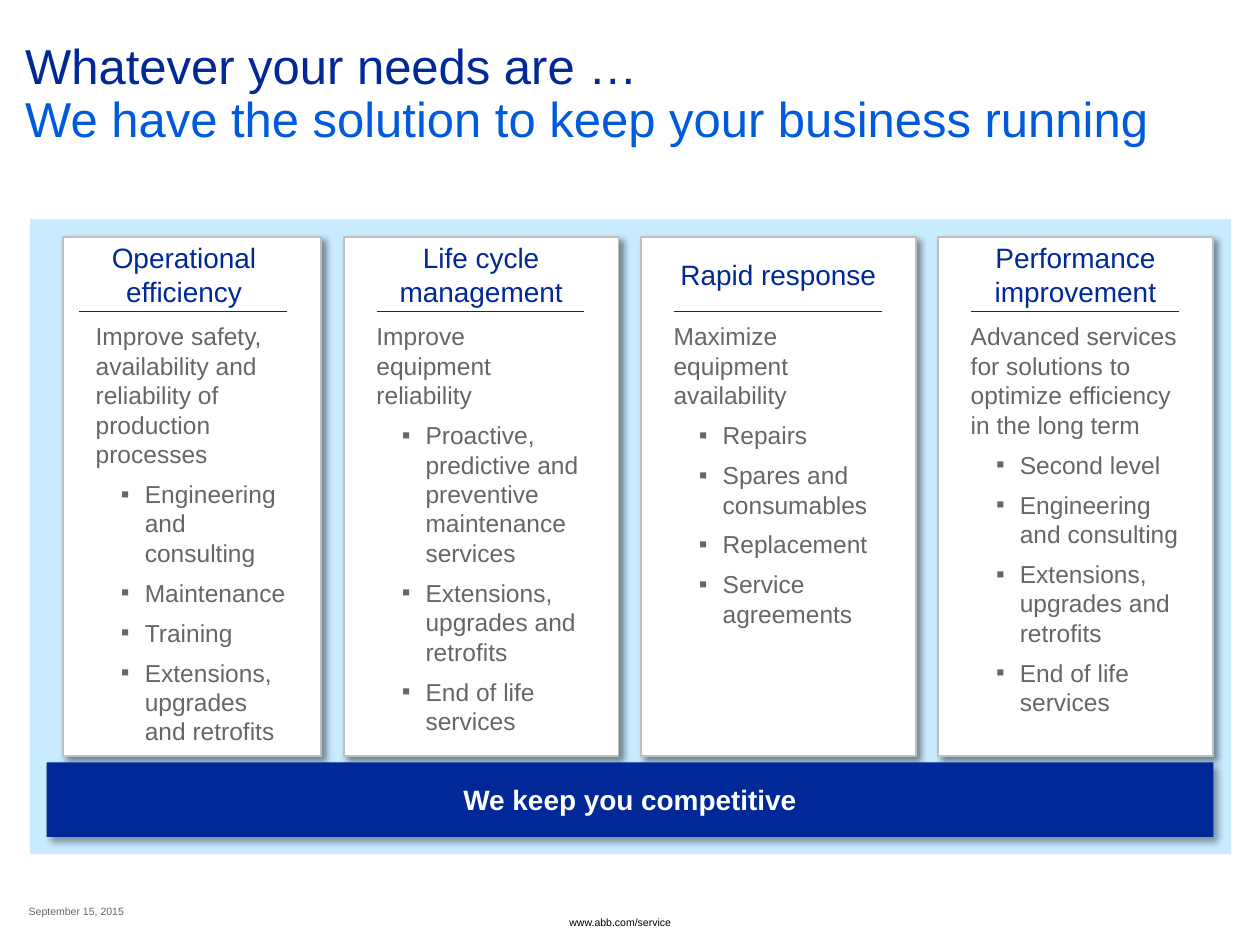
from dataclasses import dataclass

from lxml import etree
from pptx import Presentation
from pptx.dml.color import RGBColor
from pptx.enum.shapes import MSO_CONNECTOR, MSO_SHAPE
from pptx.enum.text import MSO_ANCHOR, PP_ALIGN
from pptx.oxml.ns import qn
from pptx.util import Cm, Pt

RECT, PLATE = MSO_SHAPE.RECTANGLE, MSO_SHAPE.PENTAGON
STRAIGHT = MSO_CONNECTOR.STRAIGHT
TOP, MIDDLE = MSO_ANCHOR.TOP, MSO_ANCHOR.MIDDLE
LEFT, CENTER = PP_ALIGN.LEFT, PP_ALIGN.CENTER


@dataclass(frozen=True)
class Theme:
    font: str = "Arial"
    navy: str = "002897"
    blue: str = "005ADE"
    pale: str = "C8EBFF"
    white: str = "FFFFFF"
    black: str = "000000"
    grey: str = "666666"
    border: str = "BFBFBF"
    title_size: int = 28
    head_size: int = 16
    body_size: int = 14
    foot_size: int = 6


@dataclass(frozen=True)
class Box:
    """Place and size in centimetres."""
    x: float
    y: float
    w: float
    h: float

    def emu(self) -> tuple:
        return Cm(self.x), Cm(self.y), Cm(self.w), Cm(self.h)


@dataclass(frozen=True)
class Service:
    heading: str
    summary: str
    offers: tuple
    trim: float = 0  # cut from the left of the card


T = Theme()
CARD_X, CARD_Y, CARD_W, CARD_H = 0.94, 4.78, 5.54, 10.46
PITCH, HEAD_H = 5.99, 1.5
RULE_INSET, RULE_W = 0.66, 4.19

SERVICES = (
    Service("Operational efficiency",
            "Improve safety, availability and reliability of production processes",
            ("Engineering and consulting", "Maintenance", "Training",
             "Extensions, upgrades and retrofits"), trim=0.33),
    Service("Life cycle management", "Improve equipment reliability",
            ("Proactive, predictive and preventive maintenance services",
             "Extensions, upgrades and retrofits", "End of life services")),
    Service("Rapid response", "Maximize equipment availability",
            ("Repairs", "Spares and consumables", "Replacement",
             "Service agreements")),
    Service("Performance improvement",
            "Advanced services for solutions to optimize efficiency in the long term",
            ("Second level", "Engineering and consulting",
             "Extensions, upgrades and retrofits", "End of life services")),
)


def rgb(color: str) -> RGBColor:
    return RGBColor.from_string(color)


def set_frame(tf, insets: tuple = (0, 0, 0, 0), anchor=TOP) -> None:
    tf.word_wrap = True
    tf.vertical_anchor = anchor
    (tf.margin_left, tf.margin_top,
     tf.margin_right, tf.margin_bottom) = (Cm(v) for v in insets)


def add_run(p, text: str, *, size: int, color: str, bold: bool = False) -> None:
    r = p.add_run()
    r.text = text
    r.font.name, r.font.size, r.font.bold = T.font, Pt(size), bold
    r.font.color.rgb = rgb(color)


def add_bullet(p) -> None:
    pPr = p._p.get_or_add_pPr()
    pPr.set("marL", str(Cm(0.99)))
    pPr.set("indent", str(Cm(-0.48)))
    color = etree.SubElement(pPr, qn("a:buClr"))
    etree.SubElement(color, qn("a:srgbClr"), val=T.grey)
    etree.SubElement(pPr, qn("a:buFont"), typeface=T.font)
    etree.SubElement(pPr, qn("a:buChar"), char="▪")


def add_shadow(sp, alpha: int) -> None:
    effects = sp._element.spPr.find(qn("a:effectLst"))
    shadow = etree.SubElement(effects, qn("a:outerShdw"), blurRad=str(Pt(4)),
                              dist=str(Pt(3)), dir=str(45 * 60000),
                              algn="tl", rotWithShape="0")
    color = etree.SubElement(shadow, qn("a:srgbClr"), val=T.black)
    etree.SubElement(color, qn("a:alpha"), val=str(alpha * 1000))


def add_block(s, kind, box: Box, *, fill: str = "", line: str = "",
              shadow: int = 0):
    sp = s.shapes.add_shape(kind, *box.emu())
    sp.shadow.inherit = False
    if kind == PLATE:
        sp.adjustments[0] = 0
    if fill:
        sp.fill.solid()
        sp.fill.fore_color.rgb = rgb(fill)
    else:
        sp.fill.background()
    if line:
        sp.line.color.rgb = rgb(line)
        sp.line.width = Pt(1)
    else:
        sp.line.fill.background()
    if shadow:
        add_shadow(sp, shadow)
    return sp


def add_label(sp, text: str, *, inset: float = 0, anchor=TOP, align=LEFT,
              **style) -> None:
    set_frame(sp.text_frame, (inset,) * 4, anchor)
    p = sp.text_frame.paragraphs[0]
    p.alignment = align
    add_run(p, text, **style)


def add_service(s, service: Service, x: float) -> None:
    # Card with summary and offers
    card = add_block(s, RECT, Box(x + service.trim, CARD_Y,
                                  CARD_W - service.trim, CARD_H),
                     fill=T.white, line=T.border, shadow=43)
    tf = card.text_frame
    set_frame(tf, (0.66, 1.7, 0.66, 0.2))
    p = tf.paragraphs[0]
    p.alignment = LEFT
    add_run(p, service.summary, size=T.body_size, color=T.grey)
    for offer in service.offers:
        p = tf.add_paragraph()
        p.level, p.alignment, p.space_before = 1, LEFT, Pt(6)
        add_bullet(p)
        add_run(p, offer, size=T.body_size, color=T.grey)

    # Heading and the rule below it
    head = add_block(s, PLATE, Box(x, CARD_Y, CARD_W, HEAD_H))
    add_label(head, service.heading, inset=0.2, anchor=MIDDLE, align=CENTER,
              size=T.head_size, color=T.navy)
    left, y = Cm(x + RULE_INSET), Cm(CARD_Y + HEAD_H)
    rule = s.shapes.add_connector(STRAIGHT, left, y, left + Cm(RULE_W), y)
    rule.line.color.rgb = rgb(T.navy)
    rule.line.width = Pt(1)
    etree.SubElement(rule._element.spPr, qn("a:effectLst"))


def main() -> None:
    prs = Presentation()
    prs.slide_width, prs.slide_height = Cm(25.4), Cm(19.05)
    s = prs.slides.add_slide(prs.slide_layouts[6])

    # Title
    tf = s.shapes.add_textbox(*Box(0, 0, 25.4, 1.93).emu()).text_frame
    set_frame(tf, (0.51, 0.86, 0.61, 0))
    p = tf.paragraphs[0]
    p.line_spacing = 0.9
    add_run(p, "Whatever your needs are …", size=T.title_size, color=T.navy)
    p.add_line_break()
    add_run(p, "We have the solution to keep your business running",
            size=T.title_size, color=T.blue)

    # Panel with one card per service
    add_block(s, RECT, Box(0.61, 4.42, 24.21, 12.8), fill=T.pale)
    for i, service in enumerate(SERVICES):
        add_service(s, service, CARD_X + i * PITCH)

    # Banner
    banner = add_block(s, PLATE, Box(CARD_X, 15.37, 23.52, HEAD_H),
                       fill=T.navy, shadow=40)
    add_label(banner, "We keep you competitive", inset=0.18, anchor=MIDDLE,
              align=CENTER, size=T.head_size, color=T.white, bold=True)

    # Footer
    for text, box, color in (
            ("September 15, 2015", Box(0.58, 18.24, 2.01, 0.3), T.grey),
            ("www.abb.com/service", Box(11.48, 18.47, 2.92, 0.38), T.black)):
        add_label(s.shapes.add_textbox(*box.emu()), text,
                  size=T.foot_size, color=color)

    prs.save("out.pptx")


if __name__ == "__main__":
    main()
